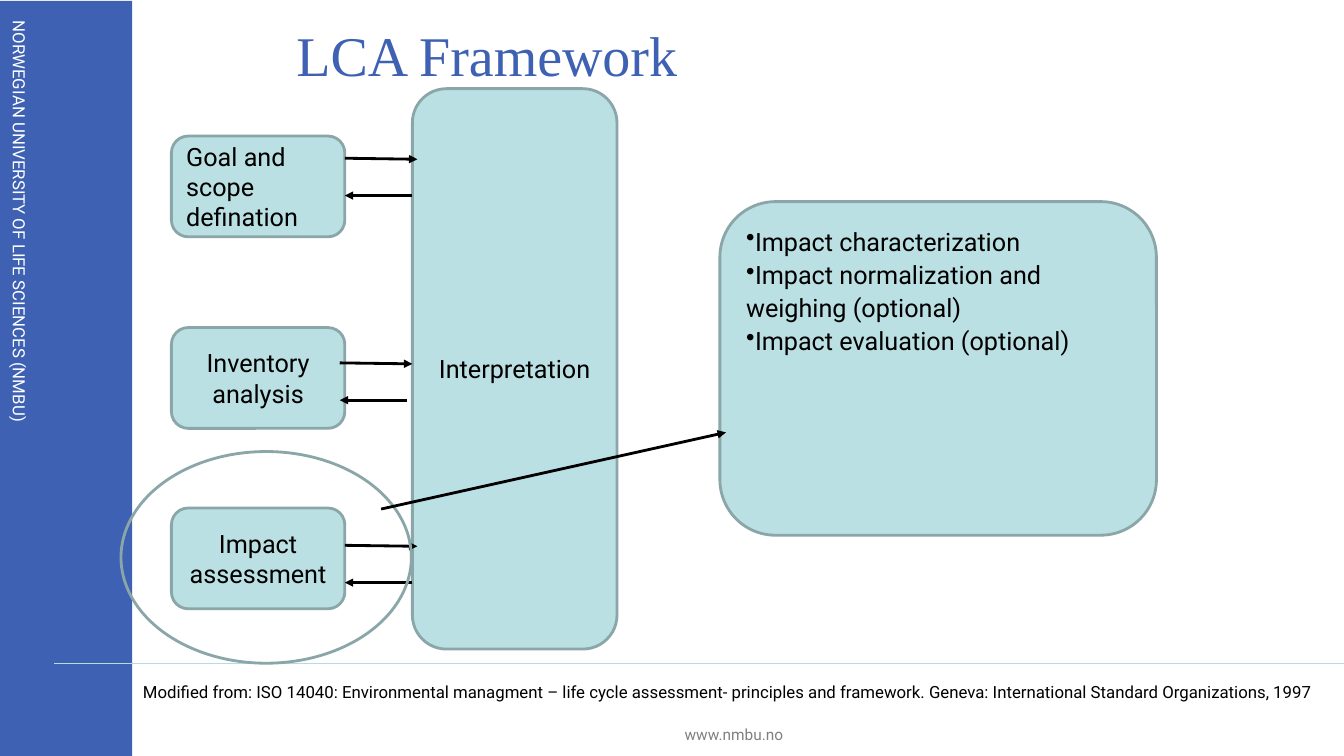
from pptx import Presentation
from pptx.dml.color import RGBColor
from pptx.enum.shapes import MSO_CONNECTOR as CONN, MSO_SHAPE as SHAPE
from pptx.enum.text import MSO_ANCHOR as ANCHOR, MSO_AUTO_SIZE as AUTO, PP_ALIGN as ALIGN
from pptx.oxml.ns import qn
from pptx.util import Inches, Pt
from lxml.etree import SubElement

BLUE = RGBColor(0x3E, 0x61, 0xB3)
TEAL = RGBColor(0xBB, 0xE0, 0xE3)
EDGE = RGBColor(0x8A, 0xA6, 0xA8)
RULE = RGBColor(0xB6, 0xDC, 0xDF)
GREY = RGBColor(0x80, 0x80, 0x80)
WHITE = RGBColor(0xFF, 0xFF, 0xFF)
BLACK = RGBColor(0, 0, 0)

STAGES = [
    ("Goal and scope defination", 1.35, ALIGN.LEFT, 3.42, 1.57),
    ("Inventory analysis", 3.25, ALIGN.CENTER, 3.37, 3.6),
    ("Impact assessment", 5.04, ALIGN.CENTER, 3.42, 5.41),
]
IMPACT_STEPS = [
    "Impact characterization",
    "Impact normalization and weighing (optional)",
    "Impact evaluation (optional)",
]
SOURCE = ("Modified from: ISO 14040: Environmental managment – life cycle assessment- "
          "principles and framework. Geneva: International Standard Organizations, 1997")


def style_text(tf, size, color=BLACK, align=ALIGN.LEFT, font="Roboto"):
    """Format every paragraph of a text frame."""
    for p in tf.paragraphs:
        p.alignment = align
        for r in p.runs:
            r.font.size = Pt(size)
            r.font.name = font
            r.font.color.rgb = color


def add_block(slide, kind, box, fill=TEAL, edge=EDGE):
    """Add a preset shape with optional fill and edge."""
    sp = slide.shapes.add_shape(kind, *map(Inches, box))
    sp.shadow.inherit = False
    if fill is None:
        sp.fill.background()
    else:
        sp.fill.solid()
        sp.fill.fore_color.rgb = fill
    if edge is None:
        sp.line.fill.background()
    else:
        sp.line.color.rgb = edge
        sp.line.width = Pt(2)
    return sp


def add_labelled(slide, text, box, align=ALIGN.CENTER):
    """Add a rounded box with a label."""
    sp = add_block(slide, SHAPE.ROUNDED_RECTANGLE, box)
    tf = sp.text_frame
    tf.text = text
    tf.vertical_anchor = ANCHOR.MIDDLE
    style_text(tf, 18, align=align)


def add_line(slide, start, end, color=BLACK, width=2, arrow=True):
    """Add a straight line, with an arrowhead at its end if wanted."""
    ends = map(Inches, (*start, *end))
    cx = slide.shapes.add_connector(CONN.STRAIGHT, *ends)
    cx.line.color.rgb = color
    cx.line.width = Pt(width)
    if arrow:
        SubElement(cx.line._get_or_add_ln(), qn("a:tailEnd"), type="triangle")
    SubElement(cx._element.spPr, qn("a:effectLst"))


def add_exchange(slide, x, y):
    """Add the arrows to and from the interpretation box."""
    add_line(slide, (x, y), (x + 0.72, y + 0.01))
    add_line(slide, (x + 0.67, y + 0.37), (x, y + 0.37))


def add_text(slide, text, box, size, color=BLACK, align=ALIGN.LEFT):
    """Add a wrapping text box."""
    sp = slide.shapes.add_textbox(*map(Inches, box))
    tf = sp.text_frame
    tf.word_wrap = True
    tf.text = text
    style_text(tf, size, color, align)
    return sp


def add_bullet_box(slide, items, box):
    """Add a rounded box holding a bulleted list."""
    tf = add_block(slide, SHAPE.ROUNDED_RECTANGLE, box).text_frame
    tf.text = "\n".join(items)
    tf.vertical_anchor = ANCHOR.TOP
    for p in tf.paragraphs:
        pPr = p._p.get_or_add_pPr()
        pPr.set("marL", "0")
        pPr.set("indent", "0")
        SubElement(pPr, qn("a:buChar"), char="•")
        p.line_spacing = 1.1
    style_text(tf, 18)


def add_title(slide, text, box):
    """Place and format the title placeholder."""
    sp = slide.shapes.title
    sp.left, sp.top, sp.width, sp.height = map(Inches, box)
    tf = sp.text_frame
    tf.text = text
    tf.auto_size = AUTO.NONE
    tf.vertical_anchor = ANCHOR.BOTTOM
    style_text(tf, 40, BLUE, font="Times New Roman")


def add_sidebar(slide, text):
    """Add the blue band with its vertical text."""
    add_block(slide, SHAPE.RECTANGLE, (0, 0.01, 1.31, 7.5), BLUE, None)
    sp = add_text(slide, text, (-1.84, 2.14, 4.07, 0.2), 12, WHITE)
    sp.rotation = 90
    tf = sp.text_frame
    tf.vertical_anchor = ANCHOR.MIDDLE
    tf.margin_left = tf.margin_right = tf.margin_top = tf.margin_bottom = 0


def main():
    """Build the slide and save it."""
    prs = Presentation()
    prs.slide_width, prs.slide_height = Inches(13.33), Inches(7.5)
    slide = prs.slides.add_slide(prs.slide_layouts[5])
    add_title(slide, "LCA Framework", (2.84, 0.15, 5.8, 0.77))
    add_sidebar(slide, "NORWEGIAN UNIVERSITY OF LIFE SCIENCES (NMBU)")
    add_text(slide, "www.nmbu.no", (5.89, 7.14, 2.78, 0.29), 11, GREY, ALIGN.CENTER)
    add_labelled(slide, "Interpretation", (4.09, 0.88, 2.03, 5.56))
    for label, top, align, arrow_x, arrow_y in STAGES:
        add_labelled(slide, label, (1.7, top, 1.72, 1), align)
        add_exchange(slide, arrow_x, arrow_y)
    add_bullet_box(slide, IMPACT_STEPS, (7.14, 2, 4.33, 3.31))
    add_text(slide, SOURCE, (1.32, 6.71, 12.13, 0.4), 12)
    add_line(slide, (0.54, 6.58), (13.33, 6.58), RULE, 0.75, arrow=False)
    add_block(slide, SHAPE.OVAL, (1.2, 4.48, 2.88, 2.1), fill=None)
    add_line(slide, (3.78, 5.05), (7.2, 4.29))
    prs.save("out.pptx")


if __name__ == "__main__":
    main()
